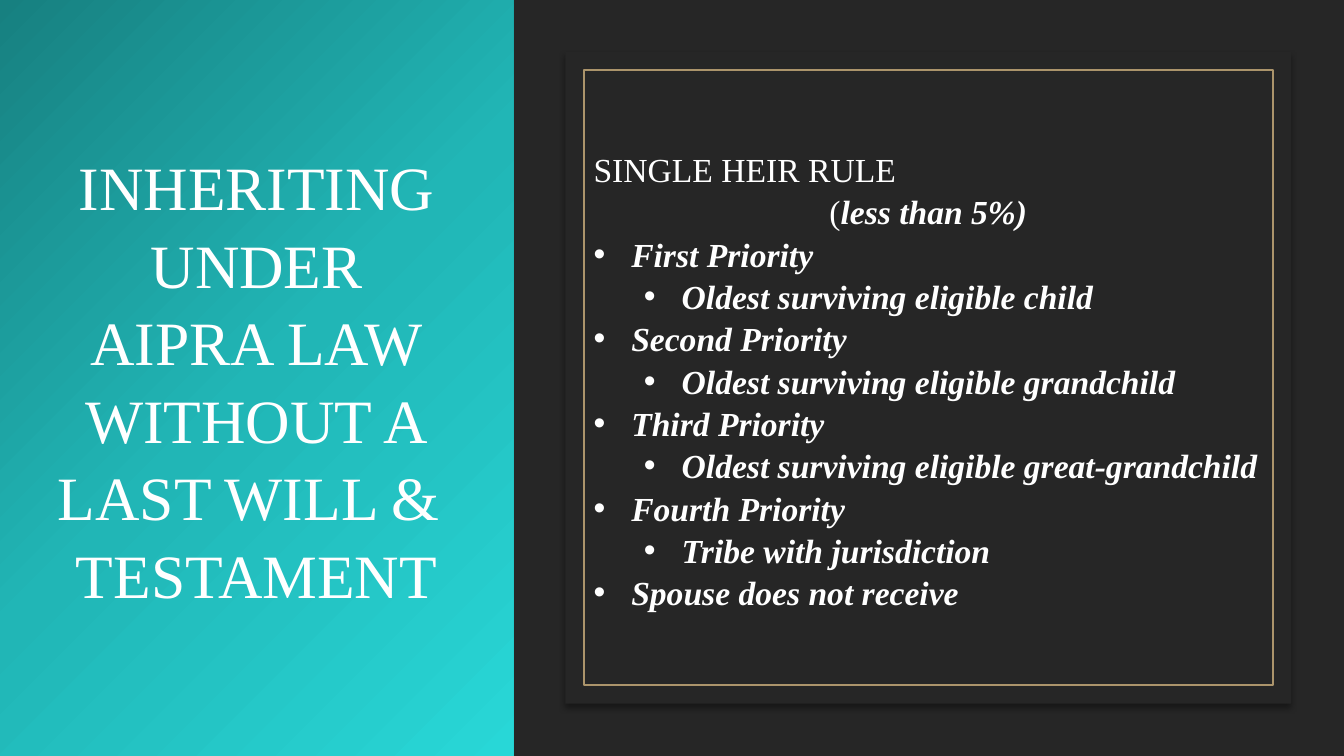
from copy import deepcopy

from lxml.etree import SubElement
from pptx import Presentation
from pptx.dml.color import RGBColor
from pptx.enum.shapes import MSO_SHAPE
from pptx.enum.text import MSO_ANCHOR, MSO_AUTO_SIZE, PP_ALIGN
from pptx.oxml.ns import qn
from pptx.util import Cm, Pt

TITLE_LINES = ["INHERITING UNDER", "AIPRA LAW", "WITHOUT A", "LAST WILL & ", "TESTAMENT"]
RULE_NAME = "SINGLE HEIR RULE"
PRIORITIES = [
    ("First Priority", "Oldest surviving eligible child"),
    ("Second Priority", "Oldest surviving eligible grandchild"),
    ("Third Priority", "Oldest surviving eligible great-grandchild"),
    ("Fourth Priority", "Tribe with jurisdiction"),
    ("Spouse does not receive", None),
]

FONT = "Times New Roman"
WHITE = RGBColor(0xFF, 0xFF, 0xFF)
CHARCOAL = RGBColor(0x26, 0x26, 0x26)
GOLD = RGBColor(0xAB, 0x94, 0x6B)
TEALS = [RGBColor(0x17, 0x80, 0x80), RGBColor(0x21, 0xB6, 0xB6), RGBColor(0x28, 0xD7, 0xD7)]

PAGE_WIDTH, PAGE_HEIGHT = Cm(33.87), Cm(19.05)
TITLE_WIDTH = Cm(12.94)
CARD_LEFT, CARD_TOP, CARD_WIDTH, CARD_HEIGHT = Cm(14.25), Cm(1.3), Cm(18.29), Cm(16.43)
FRAME_GAP = Cm(0.46)
FRAME_LEFT, FRAME_WIDTH = CARD_LEFT + FRAME_GAP, CARD_WIDTH - 2 * FRAME_GAP
HANGING = Cm(0.95)
LEVEL_STEP = Cm(1.27)
LINE_SPACING = 1.05


def add_span(para, text, size, emphasis=None):
    span = para.add_run()
    span.text = text
    span.font.name, span.font.size = FONT, Pt(size)
    span.font.color.rgb = WHITE
    span.font.bold = span.font.italic = emphasis


def fill_title(title):
    title.left, title.top, title.width, title.height = 0, 0, TITLE_WIDTH, PAGE_HEIGHT
    title.fill.gradient()
    stops = title.fill.gradient_stops
    first = title.fill._fill._gradFill.gsLst[0]
    first.addnext(deepcopy(first))
    stops = title.fill.gradient_stops
    for index, (stop, teal) in enumerate(zip(stops, TEALS)):
        stop.position = index / (len(TEALS) - 1)
        stop.color.rgb = teal
    title.fill.gradient_angle = 315
    frame = title.text_frame
    frame.word_wrap = True
    frame.auto_size = MSO_AUTO_SIZE.NONE
    frame.vertical_anchor = MSO_ANCHOR.MIDDLE
    para = frame.paragraphs[0]
    para.alignment = PP_ALIGN.CENTER
    para.line_spacing = LINE_SPACING
    for index, line in enumerate(TITLE_LINES):
        if index:
            para.add_line_break()
        add_span(para, line, 44)


def add_rectangle(page, left, top, width, height):
    box = page.shapes.add_shape(MSO_SHAPE.RECTANGLE, left, top, width, height)
    box.shadow.inherit = False
    return box


def add_shadow(box):
    effects = box._element.spPr.find(qn("a:effectLst"))
    shadow = SubElement(effects, qn("a:outerShdw"), blurRad=str(Pt(4)), dist=str(Pt(3)),
                        dir="5400000", algn="t", rotWithShape="0")
    black = SubElement(shadow, qn("a:srgbClr"), val="000000")
    SubElement(black, qn("a:alpha"), val="40000")


def add_bullet(para, level):
    para.level = level
    properties = para._p.get_or_add_pPr()
    properties.set("marL", str(HANGING + level * LEVEL_STEP))
    properties.set("indent", str(-HANGING))
    SubElement(properties, qn("a:buFont"), typeface="Arial")
    SubElement(properties, qn("a:buChar"), char="•")


def add_rules(page):
    box = page.shapes.add_textbox(FRAME_LEFT, Cm(3.58), FRAME_WIDTH, Cm(13.59))
    frame = box.text_frame
    frame.word_wrap = True
    heading = frame.paragraphs[0]
    add_span(heading, RULE_NAME, 24)
    limit = frame.add_paragraph()
    limit.alignment = PP_ALIGN.CENTER
    add_span(limit, "(", 24)
    add_span(limit, "less than 5%)", 24, True)
    for priority in PRIORITIES:
        for level, text in enumerate(priority):
            if text:
                para = frame.add_paragraph()
                add_bullet(para, level)
                add_span(para, text, 24, True)
    for para in frame.paragraphs:
        para.line_spacing = LINE_SPACING


def main():
    deck = Presentation()
    deck.slide_width, deck.slide_height = PAGE_WIDTH, PAGE_HEIGHT
    page = deck.slides.add_slide(deck.slide_layouts[5])
    page.background.fill.solid()
    page.background.fill.fore_color.rgb = CHARCOAL
    fill_title(page.shapes.title)

    card = add_rectangle(page, CARD_LEFT, CARD_TOP, CARD_WIDTH, CARD_HEIGHT)
    card.fill.solid()
    card.fill.fore_color.rgb = CHARCOAL
    card.line.fill.background()
    add_shadow(card)

    border = add_rectangle(page, FRAME_LEFT, CARD_TOP + FRAME_GAP,
                           FRAME_WIDTH, CARD_HEIGHT - 2 * FRAME_GAP)
    border.fill.background()
    border.line.color.rgb = GOLD
    border.line.width = Pt(1.25)

    add_rules(page)
    deck.save("out.pptx")


if __name__ == "__main__":
    main()
